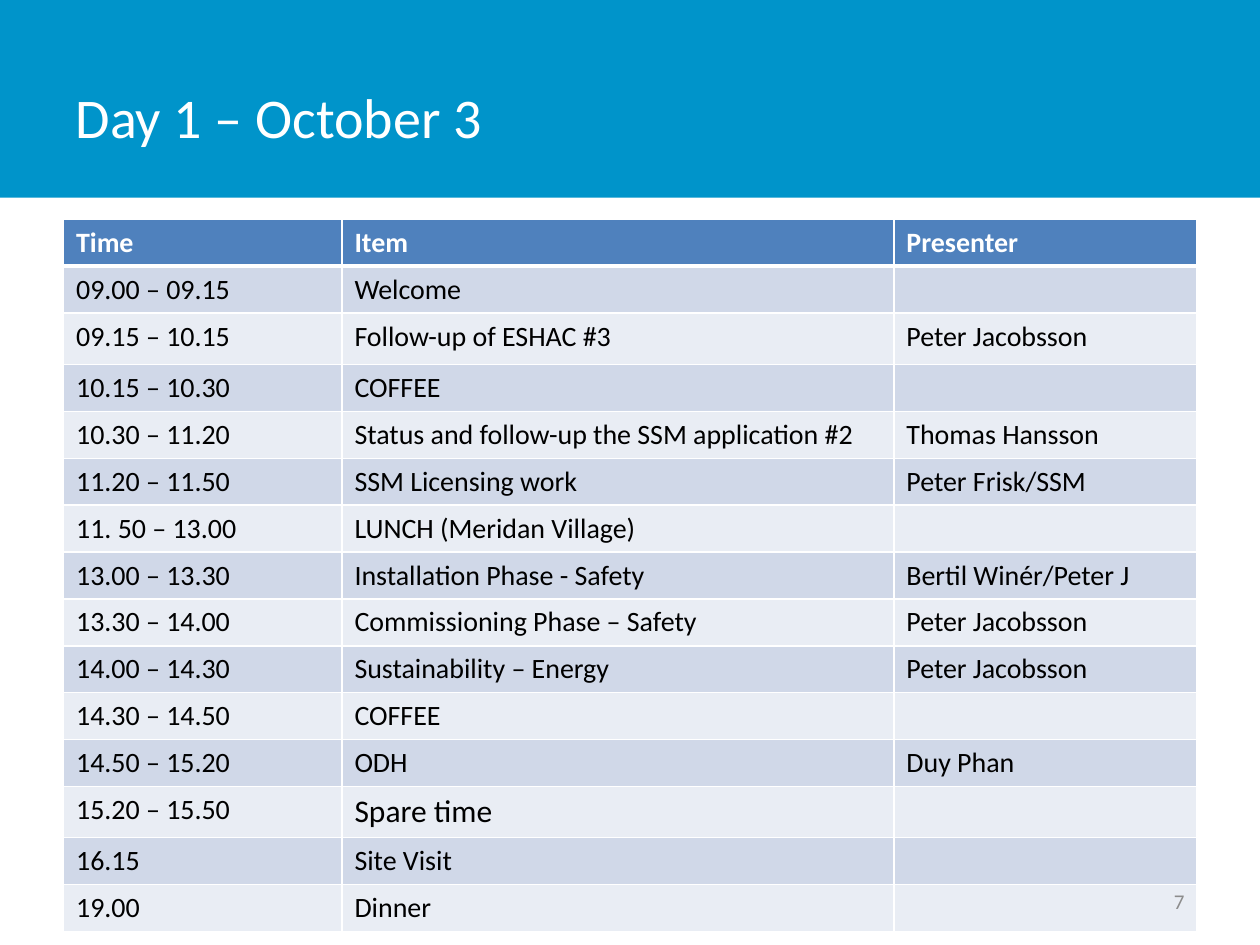
from lxml.etree import SubElement
from pptx import Presentation
from pptx.dml.color import RGBColor
from pptx.enum.shapes import MSO_SHAPE as Shape
from pptx.enum.text import MSO_ANCHOR as Anchor, PP_ALIGN as Align
from pptx.oxml.ns import qn
from pptx.util import Pt

FONT = "Calibri"
BLUE = RGBColor(0x00, 0x94, 0xCA)
HEADER = RGBColor(0x4F, 0x81, 0xBD)
BAND_DARK = RGBColor(0xD0, 0xD8, 0xE8)
BAND_LIGHT = RGBColor(0xE9, 0xED, 0xF4)
WHITE = RGBColor(0xFF, 0xFF, 0xFF)
BLACK = RGBColor(0, 0, 0)
GRAY = RGBColor(0x8C, 0x8C, 0x8C)

COL_WIDTHS = (159.1, 315.4, 172.8)
ROW_HEIGHT = 26.7
TALL_ROWS = {2: 29.5, 12: 29.2}
LARGE_ITEM = "Spare time"
AGENDA = [
    ("Time", "Item", "Presenter"),
    ("09.00 – 09.15", "Welcome", ""),
    ("09.15 – 10.15", "Follow-up of ESHAC #3", "Peter Jacobsson"),
    ("10.15 – 10.30", "COFFEE", ""),
    ("10.30 – 11.20", "Status and follow-up the SSM application #2", "Thomas Hansson"),
    ("11.20 – 11.50", "SSM Licensing work", "Peter Frisk/SSM"),
    ("11. 50 – 13.00", "LUNCH (Meridan Village)", ""),
    ("13.00 – 13.30", "Installation Phase - Safety", "Bertil Winér/Peter J"),
    ("13.30 – 14.00", "Commissioning Phase – Safety", "Peter Jacobsson"),
    ("14.00 – 14.30", "Sustainability – Energy", "Peter Jacobsson"),
    ("14.30 – 14.50", "COFFEE", ""),
    ("14.50 – 15.20", "ODH", "Duy Phan"),
    ("15.20 – 15.50", LARGE_ITEM, ""),
    ("16.15", "Site Visit", ""),
    ("19.00", "Dinner", ""),
]


def style(p, size, color, bold=False, align=Align.LEFT):
    p.alignment = align
    p.font.name, p.font.size, p.font.bold = FONT, Pt(size), bold
    p.font.color.rgb = color


def add_band(slide):
    sp = slide.shapes.add_shape(Shape.RECTANGLE, 0, 0, Pt(720), Pt(113))
    sp.shadow.inherit = False
    sp.fill.solid()
    sp.fill.fore_color.rgb = BLUE
    sp.line.fill.background()
    # Send the band behind the title
    slide.shapes.element.insert(2, sp.element)


def set_title(slide, text):
    sp = slide.shapes.title
    sp.left, sp.top, sp.width, sp.height = Pt(36), Pt(21.6), Pt(562.3), Pt(90)
    tf = sp.text_frame
    tf.text, tf.vertical_anchor = text, Anchor.MIDDLE
    style(tf.paragraphs[0], 32, WHITE)


def set_borders(cell, bottom):
    tc_pr = cell._tc.get_or_add_tcPr()
    widths = {"a:lnL": 1, "a:lnR": 1, "a:lnT": 1, "a:lnB": bottom}
    for i, (tag, width) in enumerate(widths.items()):
        ln = SubElement(tc_pr, qn(tag), w=str(Pt(width)))
        fill = SubElement(ln, qn("a:solidFill"))
        SubElement(fill, qn("a:srgbClr"), val=str(WHITE))
        tc_pr.insert(i, ln)  # borders come before the cell fill


def fill_cell(cell, text, row):
    is_header = row == 0
    cell.text = text
    cell.fill.solid()
    cell.fill.fore_color.rgb = (
        HEADER if is_header else BAND_DARK if row % 2 else BAND_LIGHT)
    style(cell.text_frame.paragraphs[0], 18 if text == LARGE_ITEM else 16,
          WHITE if is_header else BLACK, bold=is_header)
    set_borders(cell, 3 if is_header else 1)


def add_agenda(slide):
    heights = [TALL_ROWS.get(i, ROW_HEIGHT) for i in range(len(AGENDA))]
    table = slide.shapes.add_table(
        len(AGENDA), len(COL_WIDTHS), Pt(36.3), Pt(125.3),
        Pt(sum(COL_WIDTHS)), Pt(sum(heights))).table
    for col, width in zip(table.columns, COL_WIDTHS):
        col.width = Pt(width)
    for r, (height, texts) in enumerate(zip(heights, AGENDA)):
        table.rows[r].height = Pt(height)
        for c, text in enumerate(texts):
            fill_cell(table.cell(r, c), text, r)


def add_page_number(slide, number):
    tf = slide.shapes.add_textbox(Pt(516), Pt(500.5), Pt(168), Pt(28.8)).text_frame
    tf.word_wrap = True
    tf.text, tf.vertical_anchor = number, Anchor.MIDDLE
    style(tf.paragraphs[0], 12, GRAY, align=Align.RIGHT)


def main():
    prs = Presentation()
    prs.slide_width, prs.slide_height = Pt(720), Pt(540)
    slide = prs.slides.add_slide(prs.slide_layouts[5])  # Title Only
    add_band(slide)
    set_title(slide, "Day 1 – October 3")
    add_agenda(slide)
    add_page_number(slide, "7")
    prs.save("out.pptx")


if __name__ == "__main__":
    main()
